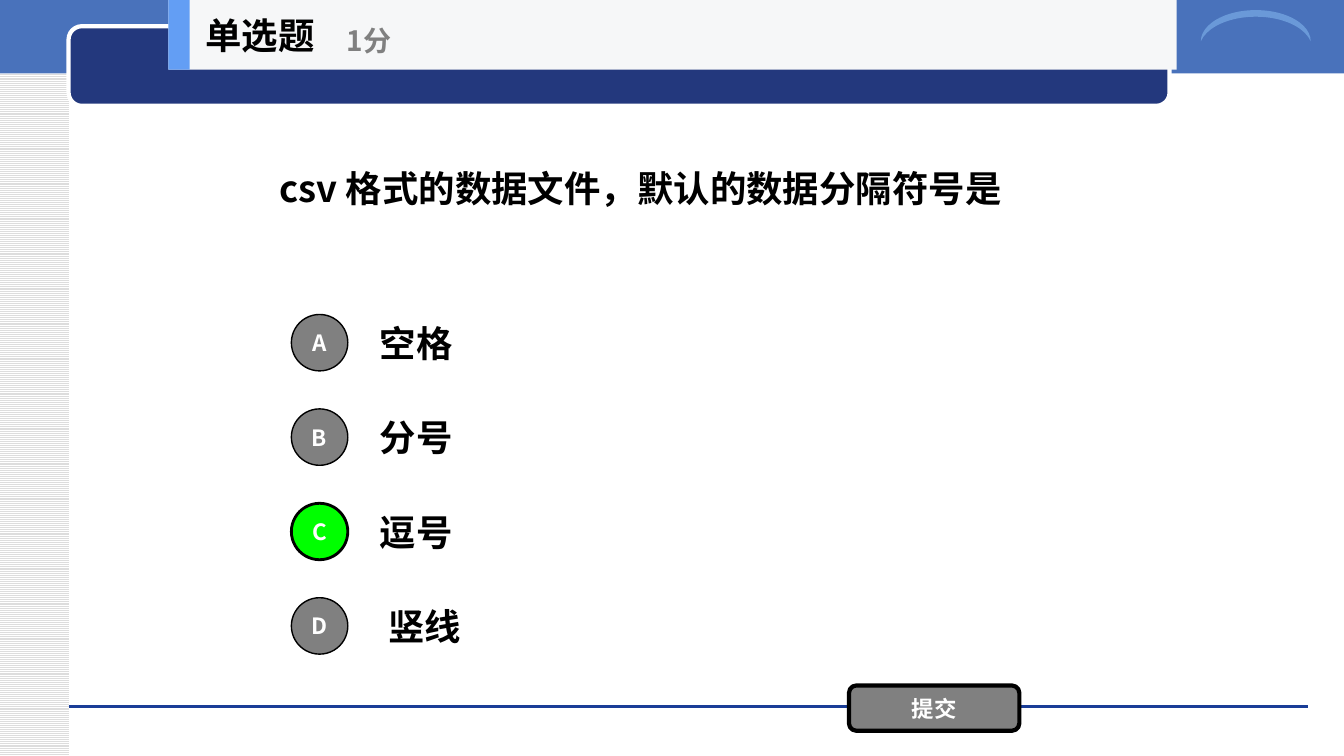
from lxml import etree
from pptx import Presentation
from pptx.dml.color import RGBColor
from pptx.enum.dml import MSO_PATTERN
from pptx.enum.shapes import MSO_CONNECTOR, MSO_SHAPE
from pptx.enum.text import MSO_ANCHOR, MSO_AUTO_SIZE, PP_ALIGN
from pptx.oxml.ns import qn
from pptx.util import Inches, Pt

RECTANGLE = MSO_SHAPE.RECTANGLE
ROUNDED = MSO_SHAPE.ROUNDED_RECTANGLE
OVAL = MSO_SHAPE.OVAL
MOON = MSO_SHAPE.MOON
STRAIGHT = MSO_CONNECTOR.STRAIGHT
STRIPES = MSO_PATTERN.LIGHT_HORIZONTAL
MIDDLE = MSO_ANCHOR.MIDDLE
NO_AUTOFIT = MSO_AUTO_SIZE.NONE
LEFT = PP_ALIGN.LEFT
CENTER = PP_ALIGN.CENTER

FONT = "Noto Sans CJK SC"
COLORS = {
    "white": "FFFFFF",
    "black": "000000",
    "gray": "808080",
    "stripe": "DDDDDD",
    "band": "4972BB",
    "navy": "23387D",
    "rule": "1A3D97",
    "moon": "6A99D8",
    "panel": "F6F7F8",
    "accent": "639EF4",
    "correct": "00FF00",
}
HEADING = {"size": 26, "color": "black"}
SCORE = {"size": 20, "color": "gray"}
LABEL = {"size": 16, "color": "white", "align": CENTER}


def color(name):
    return RGBColor.from_string(COLORS[name])


def write(shape, text, size, color, align=LEFT):
    frame = shape.text_frame
    frame_format = {"word_wrap": True, "auto_size": NO_AUTOFIT, "vertical_anchor": MIDDLE}
    for name, value in frame_format.items():
        setattr(frame, name, value)
    paragraph = frame.paragraphs[0]
    paragraph.alignment = align
    run = paragraph.add_run()
    run.text = text
    for name, value in {"name": FONT, "size": Pt(size), "bold": True}.items():
        setattr(run.font, name, value)
    run.font.color.rgb = RGBColor.from_string(COLORS[color])
    east_asian = etree.SubElement(run.font._element, qn("a:ea"))
    east_asian.set("typeface", FONT)


def add_text(slide, box, text, style):
    shape = slide.shapes.add_textbox(*map(Inches, box))
    write(shape, text, **style)


def add_block(slide, kind, box, fill, line=None, width=0, adjustment=None):
    shape = slide.shapes.add_shape(kind, *map(Inches, box))
    shape.shadow.inherit = False
    shape.fill.solid()
    shape.fill.fore_color.rgb = color(fill)
    if line:
        shape.line.color.rgb = color(line)
        shape.line.width = Pt(width)
    else:
        shape.line.fill.background()
    if adjustment is not None:
        shape.adjustments[0] = adjustment
    return shape


def add_backdrop(slide, box):
    left, top, width, height = box
    margin = 0.68
    sidebar = add_block(slide, RECTANGLE, (left, top, margin, height), "white")
    sidebar.fill.patterned()
    sidebar.fill.pattern = STRIPES
    sidebar.fill.fore_color.rgb = color("stripe")
    sidebar.fill.back_color.rgb = color("white")
    add_block(slide, RECTANGLE, (left, top - 0.03, width, 0.76), "band")
    rule_y = Inches(top + 7.01)
    rule = slide.shapes.add_connector(
        STRAIGHT, Inches(left + margin), rule_y, Inches(left + 12.97), rule_y)
    rule.line.color.rgb = color("rule")
    rule.line.width = Pt(0)
    etree.SubElement(rule._element.spPr, qn("a:effectLst"))
    add_block(slide, ROUNDED, (left + margin, top + 0.26, 10.92, 0.79),
              "navy", "white", 3, 0.167)
    moon = add_block(slide, MOON, (left + 12.3, top - 0.29, 0.31, 1.09),
                     "moon", adjustment=0.212)
    moon.rotation = 90


def add_question(slide, box, text):
    title = slide.shapes.title
    for name, value in zip(("left", "top", "width", "height"), box):
        setattr(title, name, Inches(value))
    write(title, text, **HEADING)


def add_options(slide, box, options, correct):
    left, top, width, height = box
    row_height, diameter, text_offset = 0.7, 0.56, 0.78
    pitch = (height - row_height) / (len(options) - 1)
    for index, (letter, answer) in enumerate(options.items()):
        row_top = top + index * pitch
        fill, line_width = ("correct", 2) if letter == correct else ("gray", 1)
        circle_box = (left, row_top + (row_height - diameter) / 2, diameter, diameter)
        circle = add_block(slide, OVAL, circle_box, fill, "black", line_width)
        for side in ("left", "right", "top", "bottom"):
            setattr(circle.text_frame, f"margin_{side}", 0)
        write(circle, letter, **LABEL)
        answer_box = (left + text_offset, row_top, width - text_offset, row_height)
        add_text(slide, answer_box, answer, HEADING)


def add_submit_button(slide, box, text):
    button = add_block(slide, ROUNDED, box, "gray", "black", 3)
    write(button, text, **LABEL)


def add_header(slide, box, question_type, score):
    left, top, width, height = box
    add_block(slide, RECTANGLE, box, "panel")
    add_block(slide, RECTANGLE, (left, top, 0.21, height), "accent")
    add_text(slide, (left + 0.27, top, 2.08, height), question_type, HEADING)
    add_text(slide, (left + 1.67, top + 0.12, 2.5, 0.56), score, SCORE)


def main():
    presentation = Presentation()
    presentation.slide_width = Inches(13.33)
    presentation.slide_height = Inches(7.5)
    slide = presentation.slides.add_slide(presentation.slide_layouts[5])
    add_backdrop(slide, (0, 0, 13.33, 7.5))
    add_question(slide, (2.67, 0.69, 8, 2.34), "csv 格式的数据文件，默认的数据分隔符号是")
    options = {"A": "空格", "B": "分号", "C": "逗号", "D": " 竖线"}
    add_options(slide, (2.89, 3.05, 7.78, 3.51), options, correct="C")
    add_submit_button(slide, (8.42, 6.8, 1.69, 0.45), "提交")
    add_header(slide, (1.67, 0, 10, 0.69), "单选题", "1分")
    presentation.save("out.pptx")


if __name__ == "__main__":
    main()
